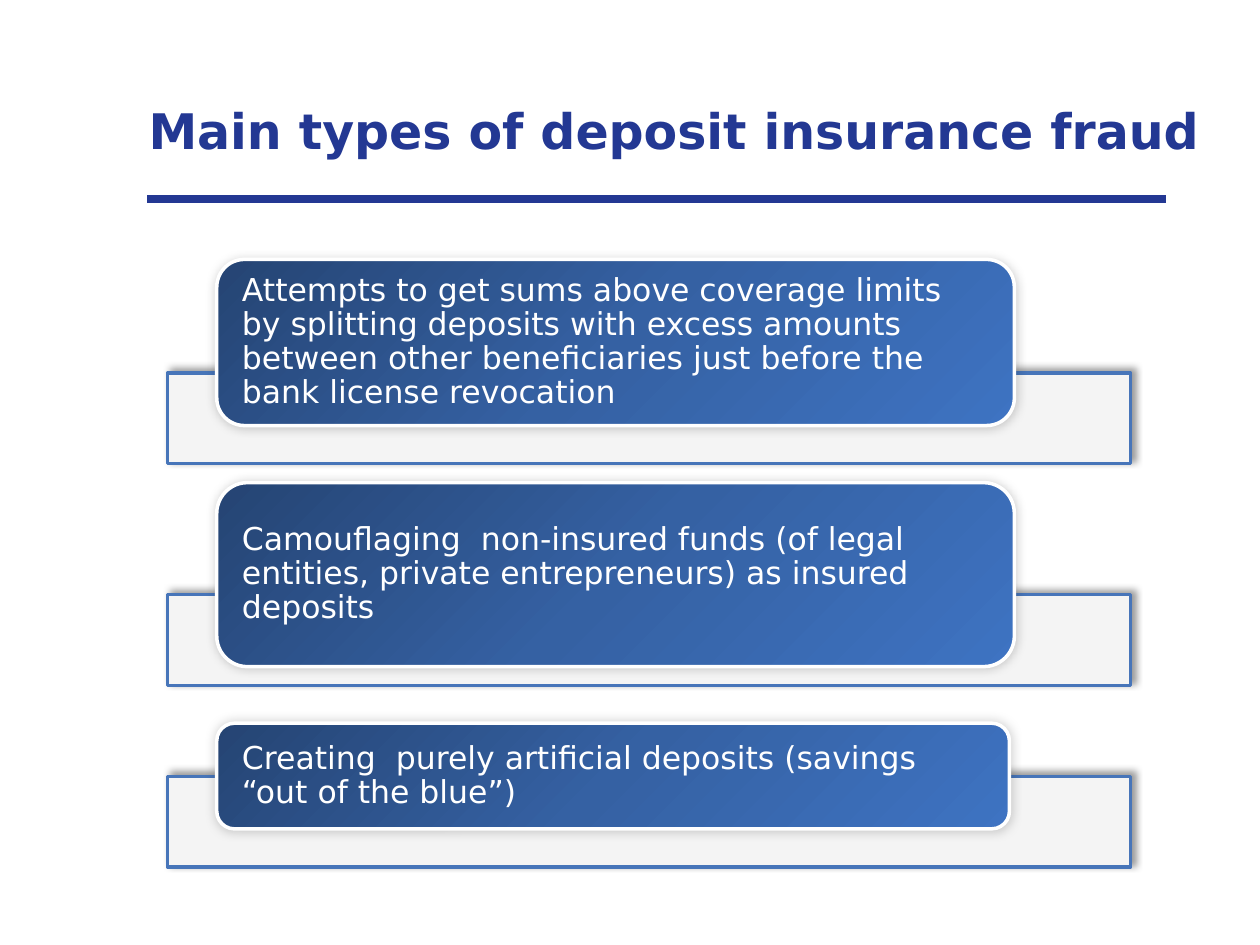
from copy import deepcopy

from lxml.etree import SubElement
from pptx import Presentation
from pptx.dml.color import RGBColor
from pptx.enum.shapes import MSO_CONNECTOR as Connector, MSO_SHAPE as Preset
from pptx.enum.text import MSO_ANCHOR as Anchor, PP_ALIGN as Align
from pptx.oxml.ns import qn
from pptx.util import Cm, Pt

COLOURS = {
    "navy": "233893",
    "bar": "F4F4F4",
    "bar_line": "4775B9",
    "card_dark": "254473",
    "card_middle": "3561A3",
    "card_light": "3E73C2",
    "white": "FFFFFF",
    "black": "000000",
}
FONT = "DejaVu Sans"
CARD_LEFT = 4.37
TEXT_INSET = 0.51
CORNER_INSET = 0.049
FRAUD_TYPES = [
    ("Attempts to get sums above coverage limits by splitting deposits with excess amounts "
     "between other beneficiaries just before the bank license revocation",
     5.23, 16.08, 3.35, 7.52),
    ("Camouflaging  non-insured funds (of legal entities, private entrepreneurs) "
     "as insured deposits",
     9.73, 16.08, 3.71, 11.99),
    ("Creating  purely artificial deposits (savings “out of the blue”)",
     14.58, 15.98, 2.13, 15.65),
]


class SlideBuilder:
    """Draws the elements of one slide in a shared style."""

    def __init__(self, slide):
        self.slide = slide

    def colour(self, name):
        return RGBColor.from_string(COLOURS[name])

    def style_text(self, paragraph, size, colour, bold=False):
        paragraph.alignment = Align.LEFT
        font = paragraph.font
        font.name, font.size, font.bold = FONT, Pt(size), bold
        font.color.rgb = self.colour(colour)

    def add_title(self, text, left, top, width, height):
        title = self.slide.shapes.title
        title.left, title.top = Cm(left), Cm(top)
        title.width, title.height = Cm(width), Cm(height)
        frame = title.text_frame
        frame.text = text
        frame.vertical_anchor = Anchor.MIDDLE
        self.style_text(frame.paragraphs[0], 28, "navy", bold=True)

    def add_rule(self, left, right, top):
        rule = self.slide.shapes.add_connector(
            Connector.STRAIGHT, Cm(left), Cm(top), Cm(right), Cm(top))
        rule.line.color.rgb = self.colour("navy")
        rule.line.width = Pt(4.5)
        SubElement(rule._element.spPr, qn("a:effectLst"))

    def add_box(self, preset, left, top, width, height, line):
        shape = self.slide.shapes.add_shape(
            preset, Cm(left), Cm(top), Cm(width), Cm(height))
        shape.line.color.rgb = self.colour(line)
        shape.line.width = Pt(2)
        return shape

    def add_shadow(self, shape, opacity, blur, distance):
        shape.shadow.inherit = False
        effects = shape._element.spPr.find(qn("a:effectLst"))
        shadow = SubElement(effects, qn("a:outerShdw"), blurRad=str(Pt(blur)),
                            dist=str(Pt(distance)), dir="18900000", rotWithShape="0")
        black = SubElement(shadow, qn("a:srgbClr"), val=COLOURS["black"])
        SubElement(black, qn("a:alpha"), val=str(opacity * 1000))

    def add_bar(self, top):
        bar = self.add_box(Preset.RECTANGLE, 3.38, top, 19.41, 1.83, "bar_line")
        bar.fill.solid()
        bar.fill.fore_color.rgb = self.colour("bar")
        self.add_shadow(bar, 40, 4, 3)

    def fill_gradient(self, shape, names):
        shape.fill.gradient()
        shape.fill.gradient_angle = 315
        stop_list = shape._element.spPr.find(".//" + qn("a:gsLst"))
        stop_list.insert(1, deepcopy(stop_list[0]))
        for index, (stop, name) in enumerate(zip(shape.fill.gradient_stops, names)):
            stop.position = index / (len(names) - 1)
            stop.color.rgb = self.colour(name)

    def add_card(self, text, top, width, height):
        card = self.add_box(Preset.ROUNDED_RECTANGLE, CARD_LEFT, top, width, height, "white")
        self.fill_gradient(card, ["card_dark", "card_middle", "card_light"])
        self.add_shadow(card, 20, 6, 0)
        frame = card.text_frame
        frame.word_wrap = True
        frame.vertical_anchor = Anchor.MIDDLE
        frame.margin_left = Cm(TEXT_INSET - CORNER_INSET * height)
        frame.margin_right = Cm(TEXT_INSET)
        frame.margin_top = frame.margin_bottom = 0
        frame.text = text
        paragraph = frame.paragraphs[0]
        paragraph.line_spacing = 0.9
        self.style_text(paragraph, 18, "white")


def main():
    presentation = Presentation()
    presentation.slide_width, presentation.slide_height = Cm(25.4), Cm(19.05)
    slide = presentation.slides.add_slide(presentation.slide_layouts[5])
    builder = SlideBuilder(slide)
    builder.add_rule(2.97, 23.5, 4.01)
    builder.add_title("Main types of deposit insurance fraud", 2.74, 1.9, 22.5, 1.45)
    for text, top, width, height, bar_top in FRAUD_TYPES:
        builder.add_bar(bar_top)
        builder.add_card(text, top, width, height)
    presentation.save("out.pptx")


if __name__ == "__main__":
    main()
